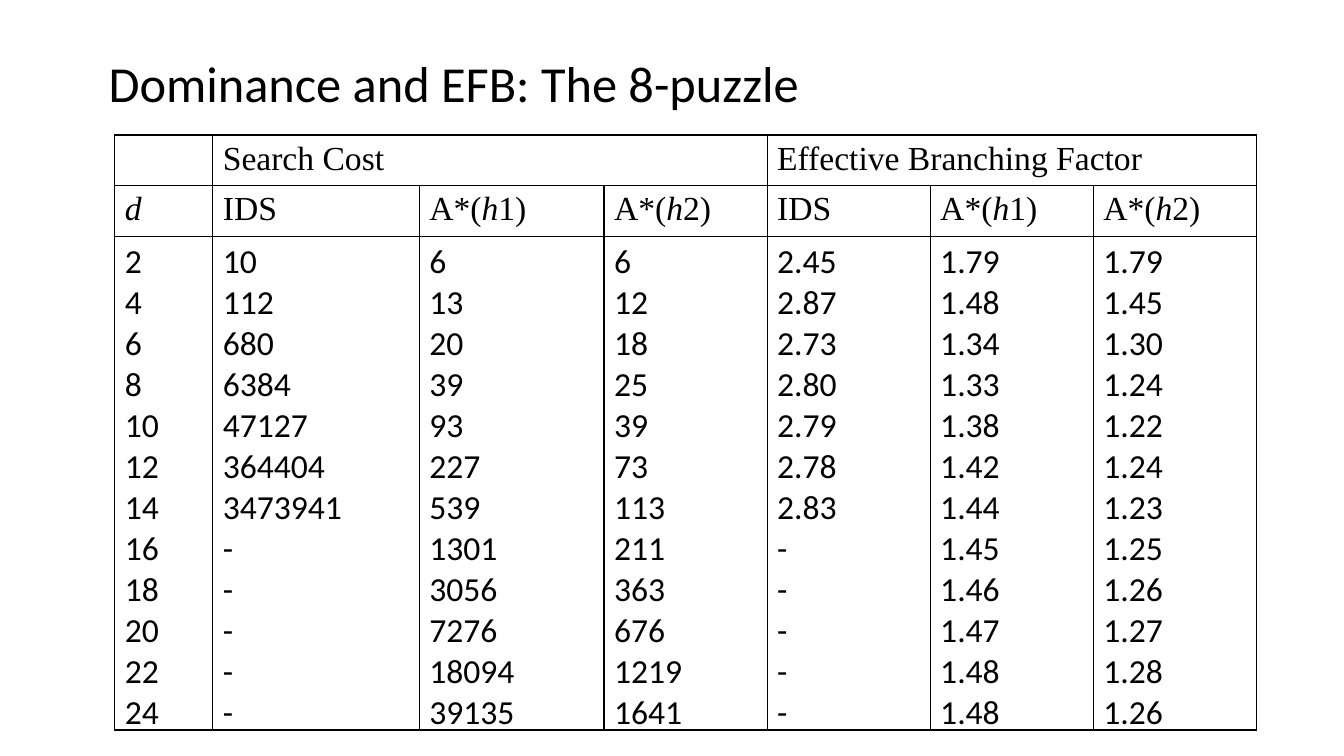
import pptx
import pptx.dml.color
import pptx.enum.text
import pptx.oxml
import pptx.oxml.ns
import pptx.util

Pt = pptx.util.Pt


def color(value):
    return pptx.dml.color.RGBColor.from_string(value)


class PageBuilder:
    """Holds the style and the current slide."""
    ink = "000000"
    paper = "FFFFFF"
    body_font = "Calibri"
    header_font = "Times New Roman"
    table_size = 24
    border_width = 1

    def __init__(self, page):
        self.page = page

    def style(self, para, font_name, size):
        para.font.name = font_name
        para.font.size = Pt(size)
        para.font.color.rgb = color(self.ink)

    def title(self, text, left, top, width, height):
        box = self.page.shapes.add_textbox(Pt(left), Pt(top), Pt(width), Pt(height))
        frame = box.text_frame
        frame.word_wrap = False
        frame.auto_size = pptx.enum.text.MSO_AUTO_SIZE.SHAPE_TO_FIT_TEXT
        para = frame.paragraphs[0]
        para.text = text
        self.style(para, self.body_font, 36)

    def table(self, left, top, widths, heights):
        frame = self.page.shapes.add_table(
            len(heights), len(widths), Pt(left), Pt(top),
            Pt(sum(widths)), Pt(sum(heights)))
        table = frame.table
        table.first_row = table.horz_banding = False
        for column, width in zip(table.columns, widths):
            column.width = Pt(width)
        for row, height in zip(table.rows, heights):
            row.height = Pt(height)
        for cell in table.iter_cells():
            self.borders(cell)
            cell.fill.solid()
            cell.fill.fore_color.rgb = color(self.paper)
            self.style(cell.text_frame.paragraphs[0], self.header_font, self.table_size)
        return table

    def borders(self, cell):
        properties = cell._tc.get_or_add_tcPr()
        for side in ("lnL", "lnR", "lnT", "lnB"):
            properties.append(pptx.oxml.parse_xml(
                f'<a:{side} {pptx.oxml.ns.nsdecls("a")} w="{Pt(self.border_width)}">'
                f'<a:solidFill><a:srgbClr val="{self.ink}"/></a:solidFill></a:{side}>'))

    def header(self, cell, spans):
        """Fill a heading cell from (text, italic) pairs."""
        para = cell.text_frame.paragraphs[0]
        for text, italic in spans:
            span = para.add_run()
            span.text = text
            span.font.italic = italic

    def values(self, cell, lines):
        """Fill a cell with one paragraph per value."""
        cell.margin_bottom = 0
        cell.text_frame.text = "\n".join(lines)
        for para in cell.text_frame.paragraphs:
            self.style(para, self.body_font, self.table_size)


# Table contents
GROUPS = {1: "Search Cost", 4: "Effective Branching Factor"}
METHODS = [
    [("IDS", False)],
    [("A*(", False), ("h", True), ("1)", False)],
    [("A*(", False), ("h", True), ("2)", False)],
]
RESULTS = """
2 10 6 6 2.45 1.79 1.79
4 112 13 12 2.87 1.48 1.45
6 680 20 18 2.73 1.34 1.30
8 6384 39 25 2.80 1.33 1.24
10 47127 93 39 2.79 1.38 1.22
12 364404 227 73 2.78 1.42 1.24
14 3473941 539 113 2.83 1.44 1.23
16 - 1301 211 - 1.45 1.25
18 - 3056 363 - 1.46 1.26
20 - 7276 676 - 1.47 1.27
22 - 18094 1219 - 1.48 1.28
24 - 39135 1641 - 1.48 1.26
"""


def main():
    deck = pptx.Presentation()
    deck.slide_width, deck.slide_height = Pt(960), Pt(540)
    builder = PageBuilder(deck.slides.add_slide(deck.slide_layouts[6]))

    # Title
    builder.title("Dominance and EFB: The 8-puzzle", 70.5, 34, 512.5, 51)

    # Table grid
    table = builder.table(82, 96.5, [70, 147.5, 132] + [116.5] * 4, [36.25, 36.25, 352.5])

    # Group headings, each over three methods
    for first, name in GROUPS.items():
        table.cell(0, first).merge(table.cell(0, first + 2))
        builder.header(table.cell(0, first), [(name, False)])

    # Column headings
    for column, spans in enumerate([[("d", True)]] + METHODS * 2):
        builder.header(table.cell(1, column), spans)

    # Results by column
    rows = [line.split() for line in RESULTS.strip().splitlines()]
    for column, lines in enumerate(zip(*rows)):
        builder.values(table.cell(2, column), lines)

    deck.save("out.pptx")


if __name__ == "__main__":
    main()
